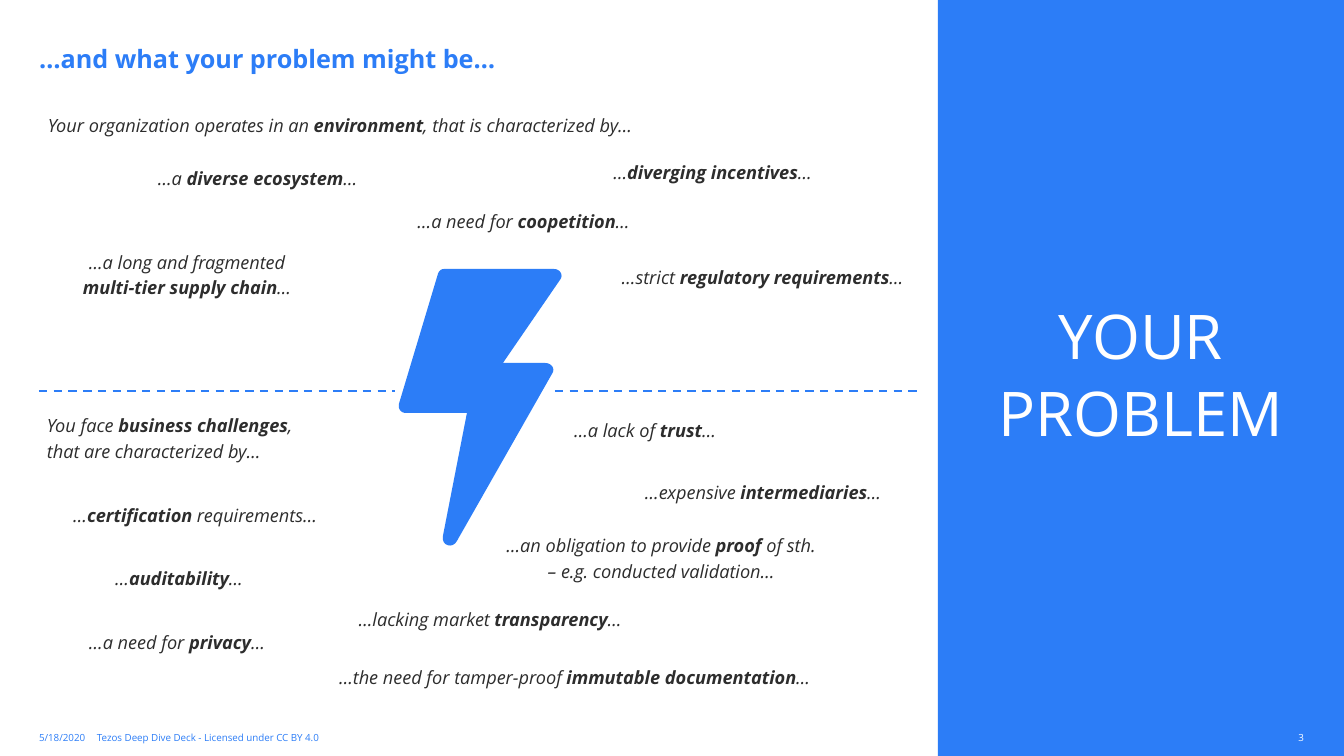
"""Build the "Your problem" slide: a blue side panel, a bolt and scattered statements."""
from lxml import etree
from pptx import Presentation
from pptx.dml.color import RGBColor
from pptx.enum.dml import MSO_LINE
from pptx.enum.shapes import MSO_CONNECTOR, MSO_SHAPE
from pptx.enum.text import MSO_ANCHOR as ANCHOR, PP_ALIGN as ALIGN
from pptx.oxml.ns import qn
from pptx.util import Pt

SCALE = 914400 / 100.8
BLUE, WHITE, INK = "2C7DF7", "FFFFFF", "2D2D2D"
FONT = "Open Sans"

PANEL = (938, 0, 406, 756)
PANEL_LINES = ["YOUR", "PROBLEM"]
TITLE = "…and what your problem might be…"
TITLE_AREA = (39, 28, 880, 46)

FOOTERS = [
    ("5/18/2020", (39, 726, 54, 24), BLUE, ALIGN.LEFT),
    ("Tezos Deep Dive Deck - Licensed under CC BY 4.0", (97, 726, 552, 24), BLUE, ALIGN.LEFT),
    ("3", (1264, 726, 40, 24), WHITE, ALIGN.RIGHT),
]

INTROS = [
    (["Your organization operates in an **environment**, that is characterized by…"],
     (40, 117, 631, 24)),
    (["You face **business challenges**,", "that are characterized by…"], (39, 417, 521, 55)),
]

STATEMENTS = [
    (["…a **diverse ecosystem**…"], (95, 168, 325, 24)),
    (["…a need for **coopetition**…"], (361, 211, 325, 24)),
    (["…**diverging incentives**…"], (550, 162, 325, 24)),
    (["…a long and fragmented", "**multi-tier supply chain**…"], (65, 248, 244, 56)),
    (["…strict **regulatory requirements**…"], (604, 261, 317, 36)),
    (["…the need for tamper-proof **immutable documentation**…"], (321, 661, 507, 36)),
    (["…lacking market **transparency**…"], (317, 603, 346, 36)),
    (["…an obligation to provide **proof** of sth.", "– e.g. conducted validation…"],
     (488, 533, 346, 53)),
    (["…a need for **privacy**…"], (47, 617, 260, 53)),
    (["…a lack of **trust**…"], (515, 405, 260, 53)),
    (["…**certification** requirements…"], (65, 490, 260, 53)),
    (["…**auditability**…"], (49, 553, 260, 53)),
    (["…expensive **intermediaries**…"], (633, 467, 260, 53)),
]

DIVIDER_Y = 391
DIVIDERS = [(39, 395), (555, 920)]

BOLT_CORNERS = [
    [(444, 269), (441, 269), (439, 271), (438, 274)],
    [(399, 404), (398, 409), (401, 413), (406, 413)],
    [(467, 413)],
    [(443, 536), (441, 546), (453, 549), (457, 541)],
    [(552, 374), (556, 368), (551, 363), (545, 363)],
    [(503, 363)],
    [(560, 280), (564, 275), (560, 269), (554, 269)],
]
CURVE_STEPS = 8


def emu(*lengths):
    return [round(length * SCALE) for length in lengths]


def color(hex_text):
    return RGBColor.from_string(hex_text)


def paint(shape, fill):
    shape.shadow.inherit = False
    shape.fill.solid()
    shape.fill.fore_color.rgb = color(fill)
    shape.line.fill.background()


def write(shape, lines, size, ink, align=ALIGN.LEFT, anchor=ANCHOR.MIDDLE, side=0, top=0,
          before=0, after=0, spacing=0.9, bold=False, italic=False):
    frame = shape.text_frame
    frame.word_wrap = True
    frame.vertical_anchor = anchor
    frame.margin_left, frame.margin_right, frame.margin_top, frame.margin_bottom = emu(
        side, side, top, 0)
    for index, line in enumerate(lines):
        para = frame.add_paragraph() if index else frame.paragraphs[0]
        para.alignment = align
        para.line_spacing = spacing
        para.space_before = Pt(before if index else 0)
        para.space_after = Pt(after)
        font = para.font
        font.name, font.size, font.bold, font.italic = FONT, Pt(size), bold, italic
        font.color.rgb = color(ink)
        for part, text in enumerate(line.split("**")):
            if text:
                span = para.add_run()
                span.text = text
                if part % 2:
                    span.font.bold = True


def corner_points(corner):
    if len(corner) == 1:
        return corner
    points = []
    for step in range(CURVE_STEPS + 1):
        t = step / CURVE_STEPS
        weights = ((1 - t) ** 3, 3 * t * (1 - t) ** 2, 3 * t * t * (1 - t), t ** 3)
        points.append(tuple(sum(w * point[axis] for w, point in zip(weights, corner))
                            for axis in (0, 1)))
    return points


def add_bolt(shapes):
    outline = [point for corner in BOLT_CORNERS for point in corner_points(corner)]
    builder = shapes.build_freeform(*emu(*outline[0]), scale=1.0)
    builder.add_line_segments([emu(*point) for point in outline[1:]], close=True)
    paint(builder.convert_to_shape(), BLUE)


def add_divider(shapes, left, right):
    line = shapes.add_connector(MSO_CONNECTOR.STRAIGHT, *emu(left, DIVIDER_Y, right, DIVIDER_Y))
    line.line.color.rgb = color(BLUE)
    line.line.width = Pt(1.5)
    line.line.dash_style = MSO_LINE.DASH
    etree.SubElement(line._element.spPr, qn("a:effectLst"))


def main():
    deck = Presentation()
    deck.slide_width, deck.slide_height = emu(1344, 756)
    page = deck.slides.add_slide(deck.slide_layouts[6])
    shapes = page.shapes

    panel = shapes.add_shape(MSO_SHAPE.RECTANGLE, *emu(*PANEL))
    paint(panel, BLUE)
    write(panel, PANEL_LINES, 44, WHITE, ALIGN.CENTER, side=39, before=6, after=2)

    title = shapes.add_textbox(*emu(*TITLE_AREA))
    write(title, [TITLE], 18, BLUE, anchor=ANCHOR.BOTTOM, top=8, bold=True)

    for text, area, ink, align in FOOTERS:
        write(shapes.add_textbox(*emu(*area)), [text], 7, ink, align, spacing=1.0)

    add_bolt(shapes)
    for left, right in DIVIDERS:
        add_divider(shapes, left, right)

    for group, align, anchor in ((INTROS, ALIGN.LEFT, ANCHOR.TOP),
                                 (STATEMENTS, ALIGN.CENTER, ANCHOR.MIDDLE)):
        for lines, area in group:
            write(shapes.add_textbox(*emu(*area)), lines, 13, INK, align, anchor,
                  side=8, before=3, after=1, italic=True)

    deck.save("out.pptx")


if __name__ == "__main__":
    main()
